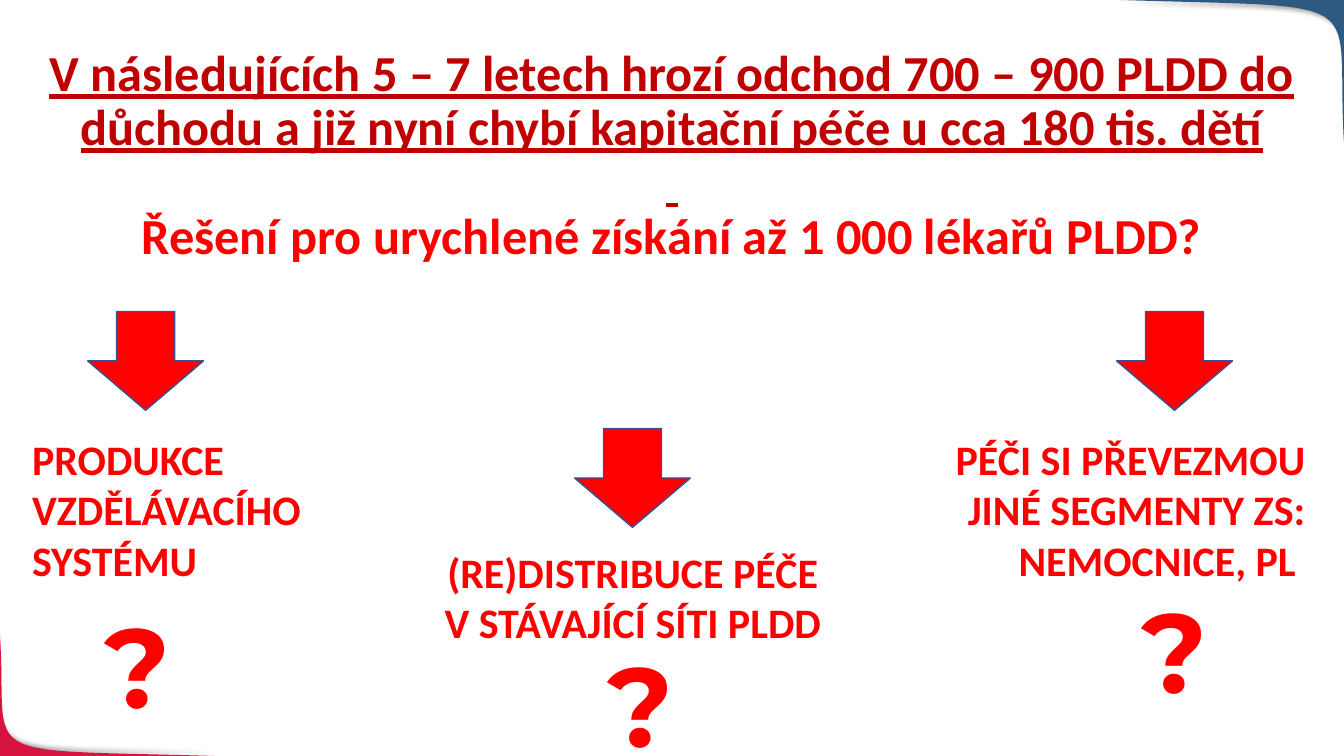
from lxml import etree
from pptx import Presentation
from pptx.dml.color import RGBColor
from pptx.enum.shapes import MSO_SHAPE
from pptx.enum.text import MSO_ANCHOR, MSO_AUTO_SIZE, PP_ALIGN
from pptx.oxml.ns import qn
from pptx.util import Cm, Pt

DOWN = MSO_SHAPE.DOWN_ARROW
TOP = MSO_ANCHOR.TOP
NONE = MSO_AUTO_SIZE.NONE
LEFT, MID, RIGHT = PP_ALIGN.LEFT, PP_ALIGN.CENTER, PP_ALIGN.RIGHT
WIDE, HIGH = 33.87, 19.05
HUES = {"red": "FF0000", "dark": "C00000", "edge": "325491",
        "rose": "D71440", "navy": "2E5980", "shade": "000000"}
CURVE = [(0, 0), (1.16, 0.06), (0.96, -0.06), (1, 1)]


def hue(name):
    """Return the colour with this name."""
    return RGBColor.from_string(HUES[name])


def add_run(para, text, size, font="Calibri", tint="red", under=False):
    """Add one bold run to a paragraph."""
    run = para.add_run()
    run.text = text
    run.font.size = Pt(size)
    run.font.name = font
    run.font.bold = True
    run.font.underline = under
    run.font.color.rgb = hue(tint)


def add_shade(shape, angle):
    """Give a shape a soft outer shadow."""
    shape.shadow.inherit = False
    effects = shape._element.spPr.find(qn("a:effectLst"))
    outer = etree.SubElement(effects, qn("a:outerShdw"), blurRad=str(Pt(4)),
                             dist=str(Pt(3)), dir=str(angle * 60000))
    tone = etree.SubElement(outer, qn("a:srgbClr"), val=HUES["shade"])
    etree.SubElement(tone, qn("a:alpha"), val="40000")


def bend(t, axis):
    """Return one coordinate of the corner curve at t."""
    a, b, c, d = (point[axis] for point in CURVE)
    s = 1 - t
    return a * s**3 + 3 * b * t * s**2 + 3 * c * t**2 * s + d * t**3


def add_corner(slide, box, tint, angle, turn=False):
    """Draw a curved corner in its box, turned half round if asked."""
    x, y, w, h = box
    spots = [(bend(i / 40, 0), bend(i / 40, 1)) for i in range(41)] + [(1, 0)]
    if turn:
        spots = [(1 - u, 1 - v) for u, v in spots]
    spots = [(Cm(x + u * w), Cm(y + v * h)) for u, v in spots]
    build = slide.shapes.build_freeform(*spots[0])
    build.add_line_segments(spots[1:], close=True)
    shape = build.convert_to_shape()
    shape.fill.solid()
    shape.fill.fore_color.rgb = hue(tint)
    shape.line.fill.background()
    add_shade(shape, angle)


def add_title(slide, box):
    """Fill the title placeholder with warning and question."""
    title = slide.shapes.title
    title.left, title.top, title.width, title.height = map(Cm, box)
    frame = title.text_frame
    frame.word_wrap = True
    frame.auto_size = NONE
    frame.vertical_anchor = TOP
    para = frame.paragraphs[0]
    para.alignment = MID
    para.line_spacing = 0.9
    add_run(para, "V následujících 5 – 7 letech hrozí odchod 700 – 900 PLDD do "
            "důchodu a již nyní chybí kapitační péče u cca 180 tis. dětí",
            36, tint="dark", under=True)
    para.add_line_break()
    add_run(para, " ", 36, tint="dark", under=True)
    para.add_line_break()
    add_run(para, "Řešení pro urychlené získání až 1 000 lékařů PLDD?", 36)


def add_text(slide, box, lines, align, size, font="Calibri"):
    """Place a text box with one paragraph a line."""
    frame = slide.shapes.add_textbox(*map(Cm, box)).text_frame
    frame.word_wrap = True
    for i, line in enumerate(lines):
        para = frame.add_paragraph() if i else frame.paragraphs[0]
        para.alignment = align
        add_run(para, line, size, font)


def add_path(slide, box, lines, align, arrow, mark):
    """Place a label in its box with an arrow above and a mark below."""
    x, y, w, h = box
    shape = slide.shapes.add_shape(DOWN, Cm(x + arrow[0]), Cm(y + arrow[1]),
                                   Cm(2.92), Cm(2.49))
    shape.shadow.inherit = False
    shape.fill.solid()
    shape.fill.fore_color.rgb = hue("red")
    shape.line.color.rgb = hue("edge")
    shape.line.width = Pt(1)
    add_text(slide, box, lines, align, 30)
    add_text(slide, (x + mark[0], y + mark[1], 3.33, 3.68), ["?"], MID, 80,
             "Montserrat")


def main():
    """Build the slide and save it."""
    deck = Presentation()
    deck.slide_width, deck.slide_height = Cm(WIDE), Cm(HIGH)
    slide = deck.slides.add_slide(deck.slide_layouts[5])
    add_corner(slide, (0, HIGH - 3.05, 5.41, 3.05), "rose", 225, True)
    add_corner(slide, (WIDE - 5.65, 0, 5.65, 3.6), "navy", 45)
    add_title(slide, (0, 1.07, WIDE, 5.59))
    add_path(slide, (0.56, 10.8, 8.18, 4.11), ["PRODUKCE VZDĚLÁVACÍHO SYSTÉMU"],
             LEFT, (1.65, -2.95), (1.24, 4.11))
    add_path(slide, (10.9, 13.64, 10.1, 2.82),
             ["(RE)DISTRIBUCE PÉČE V STÁVAJÍCÍ SÍTI PLDD"],
             MID, (3.58, -2.84), (3.58, 2.26))
    add_path(slide, (23.14, 10.8, 10.01, 4.11),
             ["PÉČI SI PŘEVEZMOU JINÉ SEGMENTY ZS:", "NEMOCNICE, PL "],
             RIGHT, (5, -2.95), (4.8, 3.73))
    deck.save("out.pptx")


if __name__ == "__main__":
    main()
